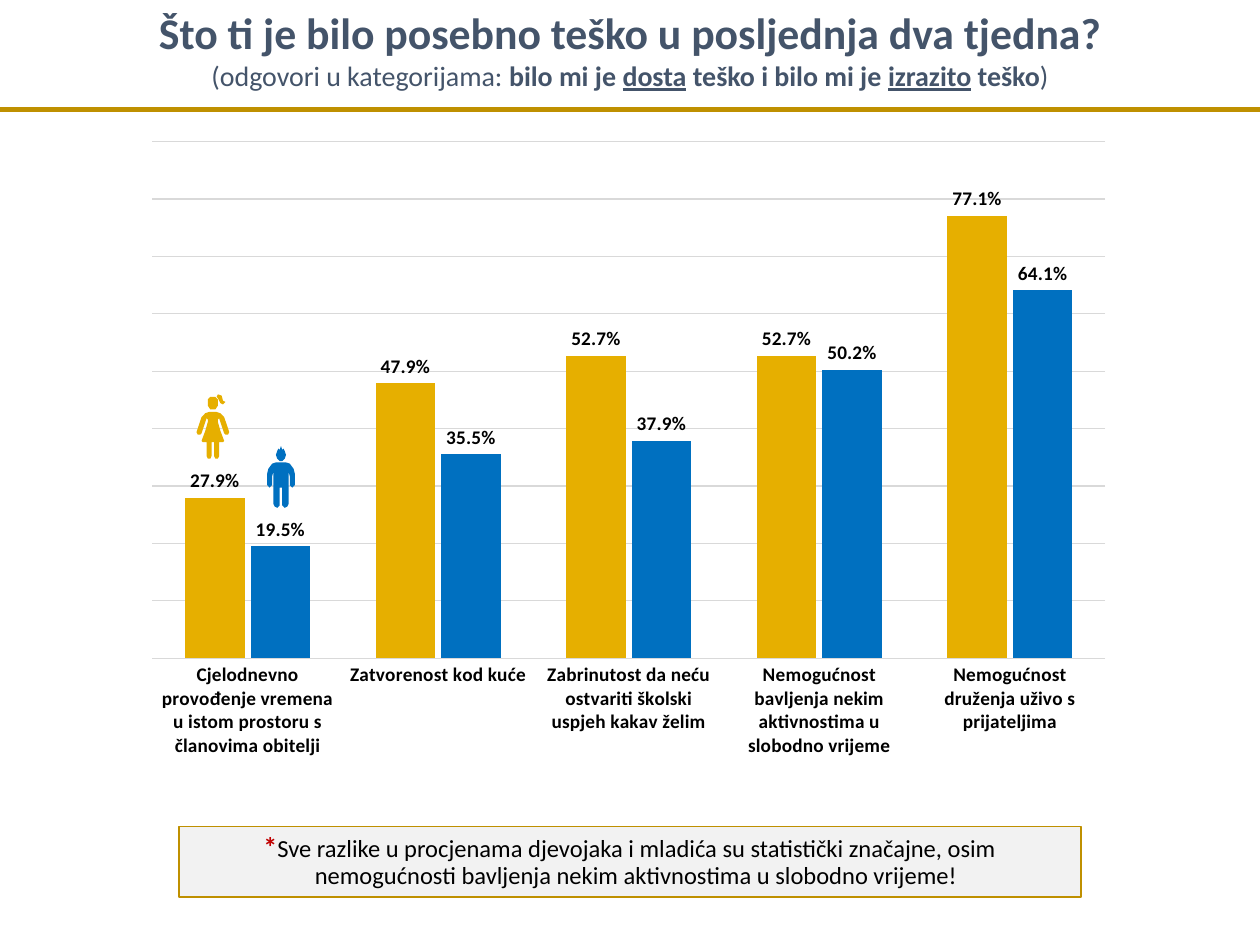
from lxml import etree
from pptx import Presentation, util as u
from pptx.chart.data import CategoryChartData
from pptx.dml.color import RGBColor
from pptx.enum import chart as charts, shapes, text
from pptx.oxml import parse_xml
from pptx.oxml.ns import nsdecls, qn

THEME = {
    "font": "Calibri",
    "heading": "44546A", "gold": "BF9000", "girls": "E6AF00", "boys": "0070C0",
    "star": "C00000", "ink": "000000", "panel": "F2F2F2", "grid": "D9D9D9",
    "title": 25, "subtitle": 16, "note": 14, "label": 11, "chart": 10,
}


def style(font, size, colour, bold=False, underline=False):
    font.name = THEME["font"]
    font.size = u.Pt(THEME[size])
    font.color.rgb = RGBColor.from_string(THEME[colour])
    font.bold = bold
    font.underline = underline


def mirrored(half):
    """Close a right-hand half outline with its reflection in the vertical axis."""
    return half + [(-x, y) for x, y in reversed(half)]


deck = Presentation()
deck.slide_width, deck.slide_height = u.Inches(10), u.Inches(7.5)
col, row = deck.slide_width // 100, deck.slide_height // 75
slide = deck.slides.add_slide(deck.slide_layouts[6])

# Heading: each run is text, bold, underline
heading = [
    ("title", [("Što ti je bilo posebno teško u posljednja dva tjedna?", True, False)]),
    ("subtitle", [
        ("(odgovori u kategorijama: ", False, False),
        ("bilo mi je ", True, False),
        ("dosta", True, True),
        (" teško i bilo mi je ", True, False),
        ("izrazito", True, True),
        (" teško", True, False),
        (")", False, False),
    ]),
]
box = slide.shapes.add_textbox(0, 0, 100 * col, int(7.9 * row))
box.text_frame.word_wrap = True
for index, (size, runs) in enumerate(heading):
    para = box.text_frame.paragraphs[0] if index == 0 else box.text_frame.add_paragraph()
    para.alignment = text.PP_ALIGN.CENTER
    for words, bold, underline in runs:
        span = para.add_run()
        span.text = words
        style(span.font, size, "heading", bold, underline)

rule_y = int(8.7 * row)
rule = slide.shapes.add_connector(shapes.MSO_CONNECTOR.STRAIGHT, 0, rule_y, 100 * col, rule_y)
rule.line.color.rgb = RGBColor.from_string(THEME["gold"])
rule.line.width = u.Pt(3)
etree.SubElement(rule._element.spPr, qn("a:effectLst"))

# Note below the chart
note = slide.shapes.add_shape(
    shapes.MSO_SHAPE.RECTANGLE,
    int(14.2 * col), int(65.6 * row), int(71.6 * col), int(5.6 * row))
note.shadow.inherit = False
note.fill.solid()
note.fill.fore_color.rgb = RGBColor.from_string(THEME["panel"])
note.line.color.rgb = RGBColor.from_string(THEME["gold"])
note.line.width = u.Pt(0.75)
note.text_frame.word_wrap = True
note.text_frame.vertical_anchor = text.MSO_ANCHOR.MIDDLE
para = note.text_frame.paragraphs[0]
para.alignment = text.PP_ALIGN.CENTER
para.line_spacing = 0.9
indents = para._p.get_or_add_pPr()
indents.set("marL", str(col))
indents.set("indent", str(-col))
for words, size, colour, bold in [
    ("*", "subtitle", "star", True),
    ("Sve razlike u procjenama djevojaka i mladića su statistički značajne, osim "
     "nemogućnosti bavljenja nekim aktivnostima u slobodno vrijeme!", "note", "ink", False),
]:
    span = para.add_run()
    span.text = words
    style(span.font, size, colour, bold)

# Chart of girls and boys
answers = CategoryChartData(number_format="0.0%")
answers.categories = [
    "Cjelodnevno provođenje vremena u istom prostoru s članovima obitelji",
    "Zatvorenost kod kuće",
    "Zabrinutost da neću ostvariti školski uspjeh kakav želim",
    "Nemogućnost bavljenja nekim aktivnostima u slobodno vrijeme",
    "Nemogućnost druženja uživo s prijateljima",
]
answers.add_series("Series 1", [0.279, 0.479, 0.527, 0.527, 0.771])
answers.add_series("Series 2", [0.195, 0.355, 0.379, 0.502, 0.641])
chart = slide.shapes.add_chart(
    charts.XL_CHART_TYPE.COLUMN_CLUSTERED,
    int(10.6 * col), int(9.7 * row), int(78.7 * col), int(51.2 * row), answers).chart
chart.has_title = False
chart.has_legend = False
style(chart.font, "chart", "ink")

plot = chart.plots[0]
plot.vary_by_categories = False
plot.gap_width, plot.overlap = 110, -10
for series, colour in zip(plot.series, ("girls", "boys")):
    series.format.fill.solid()
    series.format.fill.fore_color.rgb = RGBColor.from_string(THEME[colour])
    labels = series.data_labels
    labels.show_value = True
    labels.number_format, labels.number_format_is_linked = "0.0%", False
    labels.position = charts.XL_LABEL_POSITION.OUTSIDE_END
    style(labels.font, "label", "ink", True)

questions, shares = chart.category_axis, chart.value_axis
questions.major_tick_mark = charts.XL_TICK_MARK.NONE
style(questions.tick_labels.font, "label", "ink", True)
shares.minimum_scale, shares.maximum_scale, shares.major_unit = 0, 0.9, 0.1
shares.tick_labels.number_format = "0.0%"
shares.tick_labels.number_format_is_linked = False
shares.has_major_gridlines = True
shares.visible = False
for line in (questions.format.line, shares.major_gridlines.format.line):
    line.color.rgb = RGBColor.from_string(THEME["grid"])
    line.width = u.Pt(0.75)

plot_area = chart._chartSpace.chart.plotArea
for old in plot_area.findall(qn("c:layout")):
    plot_area.remove(old)
places = "".join(f'<c:{name} val="{value}"/>' for name, value in [
    ("layoutTarget", "inner"), ("xMode", "edge"), ("yMode", "edge"),
    ("x", 0.019), ("y", 0.03), ("w", 0.961), ("h", 0.801)])
plot_area.insert(0, parse_xml(
    f'<c:layout {nsdecls("c")}><c:manualLayout>{places}</c:manualLayout></c:layout>'))

# Figures: outlines in tenths of a column around each figure's own axis
girl = [
    mirrored([(0, 2), (2, 2), (4, 4), (4, 9), (2, 12), (0, 12)]),
    [(3, 2), (4, 0), (7, 1), (8, 5), (10, 6), (8, 8), (6, 7), (4, 3)],
    mirrored([(0, 14), (3, 14), (6, 15), (9, 18), (13, 30), (12, 32), (10, 32), (9, 31),
              (5, 19), (4, 20), (4, 22), (6, 29), (9, 37), (8, 38), (5, 38), (5, 49),
              (4, 51), (2, 51), (1, 49), (1, 38), (0, 38)]),
]
boy = [
    mirrored([(0, 0), (1, 3), (2, 2), (3, 4), (4, 7), (3, 10), (1, 12), (0, 12)]),
    mirrored([(0, 13), (4, 13), (7, 14), (10, 18), (11, 22), (11, 31), (9, 33), (7, 31),
              (7, 24), (6, 20), (6, 46), (5, 48), (3, 49), (1, 47), (1, 33), (0, 33)]),
]
for outlines, axis, top, colour in [(girl, 16.9, 31.3, "girls"), (boy, 22.3, 35.4, "boys")]:
    pen = slide.shapes.build_freeform(*outlines[0][0], scale=col / 10)
    for index, outline in enumerate(outlines):
        if index:
            pen.move_to(*outline[0])
        pen.add_line_segments(outline[1:], close=True)
    figure = pen.convert_to_shape(int(axis * col), int(top * row))
    figure.shadow.inherit = False
    figure.fill.solid()
    figure.fill.fore_color.rgb = RGBColor.from_string(THEME[colour])
    figure.line.fill.background()

deck.save("out.pptx")
